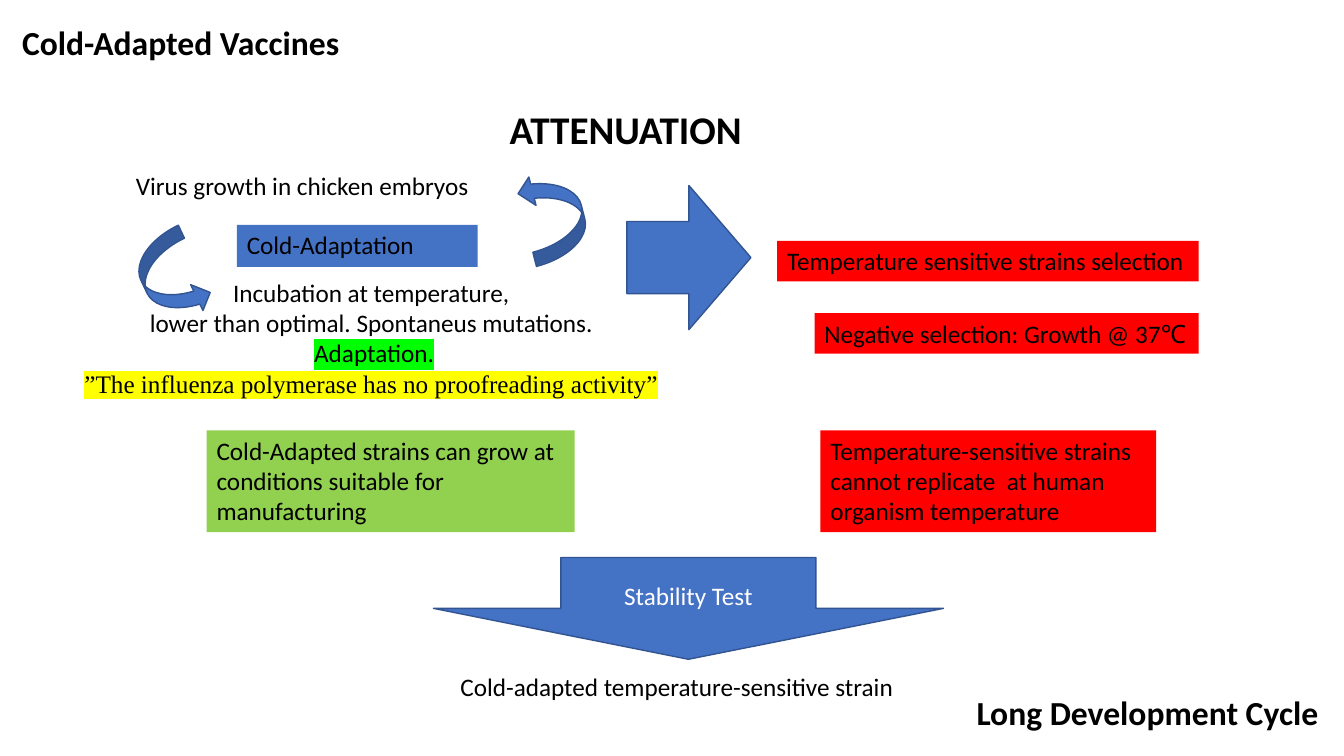
from dataclasses import dataclass

from lxml.etree import SubElement
from pptx import Presentation
from pptx.dml.color import RGBColor
from pptx.enum.shapes import MSO_SHAPE as Preset
from pptx.enum.text import MSO_ANCHOR as Anchor, MSO_AUTO_SIZE as AutoSize, PP_ALIGN as Align
from pptx.oxml.ns import qn
from pptx.util import Pt


@dataclass(frozen=True)
class Theme:
    font: str = "Calibri"
    quote_font: str = "Times New Roman"
    black: str = "000000"
    white: str = "FFFFFF"
    blue: str = "4472C4"
    outline: str = "325491"
    green: str = "92D050"
    red: str = "FF0000"
    lime_marker: str = "00FF00"
    yellow_marker: str = "FFFF00"
    body: int = 18
    title: int = 24
    heading: int = 28


THEME = Theme()


def rgb(color):
    return RGBColor.from_string(color)


def add_run(paragraph, text, size=THEME.body, bold=False, color=THEME.black,
            font=THEME.font, marker=None):
    run = paragraph.add_run()
    run.text = text
    run.font.size = Pt(size)
    run.font.bold = bold
    run.font.color.rgb = rgb(color)
    if marker:
        properties = run.font._element
        highlight = SubElement(properties, qn("a:highlight"))
        SubElement(highlight, qn("a:srgbClr"), val=marker)
    run.font.name = font


def place(shape, box):
    shape.left, shape.top, shape.width, shape.height = (Pt(value) for value in box)


def write(shape, lines, wrap=True, align=Align.LEFT, anchor=Anchor.TOP,
          auto_size=AutoSize.SHAPE_TO_FIT_TEXT, **style):
    """Fill a shape with lines, each a list of (text, run options) pairs."""
    frame = shape.text_frame
    frame.word_wrap = wrap
    frame.auto_size = auto_size
    frame.vertical_anchor = anchor
    for index, line in enumerate(lines):
        paragraph = frame.add_paragraph() if index else frame.paragraphs[0]
        paragraph.alignment = align
        for text, options in line:
            add_run(paragraph, text, **{**style, **options})


def add_text(slide, box, text, **style):
    shape = slide.shapes.add_textbox(*(Pt(value) for value in box))
    write(shape, [[(text, {})]], **style)


def add_block(slide, preset, box, fill, outline=None, rotation=0):
    shape = slide.shapes.add_shape(preset, *(Pt(value) for value in box))
    shape.shadow.inherit = False
    shape.rotation = rotation
    shape.fill.solid()
    shape.fill.fore_color.rgb = rgb(fill)
    if outline:
        shape.line.color.rgb = rgb(outline)
        shape.line.width = Pt(1)
    else:
        shape.line.fill.background()
    return shape


def add_label(slide, box, fill, text, wrap=True):
    write(add_block(slide, Preset.RECTANGLE, box, fill), [[(text, {})]], wrap=wrap)


def add_arrow(slide, preset, box, rotation=0):
    return add_block(slide, preset, box, THEME.blue, THEME.outline, rotation)


def add_title(slide, box, text):
    title = slide.shapes.title
    place(title, box)
    write(title, [[(text, {})]], wrap=False, size=THEME.title, bold=True)


def add_incubation_notes(slide, box):
    shape = slide.shapes.add_textbox(*(Pt(value) for value in box))
    quote = {"font": THEME.quote_font, "marker": THEME.yellow_marker}
    write(shape, [
        [("Incubation at temperature,", {})],
        [("lower than optimal. Spontaneus mutations.", {})],
        [(" ", {}), ("Adaptation.", {"marker": THEME.lime_marker})],
        [("”The influenza polymerase has no proofreading activity”", quote)],
    ], wrap=False, align=Align.CENTER)


def main():
    presentation = Presentation()
    presentation.slide_width, presentation.slide_height = Pt(960), Pt(540)
    slide = presentation.slides.add_slide(presentation.slide_layouts[5])

    add_title(slide, (8.6, 12.2, 244, 36), "Cold-Adapted Vaccines")
    add_text(slide, (357, 72, 182, 41), "ATTENUATION",
             wrap=False, size=THEME.heading, bold=True)

    add_incubation_notes(slide, (51, 194.4, 428.4, 94.3))
    add_text(slide, (90, 118.1, 264.2, 29), "Virus growth in chicken embryos")
    add_arrow(slide, Preset.CURVED_UP_ARROW, (90.7, 177.8, 63.4, 41), 64.6)
    add_arrow(slide, Preset.CURVED_UP_ARROW, (363.6, 133.2, 64, 41.8), 255.8)
    add_label(slide, (169.2, 160.6, 172, 30), THEME.blue, "Cold-Adaptation")
    add_label(slide, (147.6, 307.4, 262.8, 72.7), THEME.green,
              "Cold-Adapted strains can grow at conditions suitable for manufacturing")

    add_arrow(slide, Preset.RIGHT_ARROW, (447.8, 132.5, 88.6, 103))
    add_label(slide, (555.1, 172, 301, 29), THEME.red,
              "Temperature sensitive strains selection", wrap=False)
    add_label(slide, (581.8, 223.6, 274.3, 29), THEME.red,
              "Negative selection: Growth @ 37℃", wrap=False)
    add_label(slide, (586.1, 307.4, 239.8, 72.7), THEME.red,
              "Temperature-sensitive strains cannot replicate  at human organism temperature")

    stability = add_arrow(slide, Preset.DOWN_ARROW, (309.6, 398.2, 364.3, 72.7))
    write(stability, [[("Stability Test", {})]], align=Align.CENTER,
          anchor=Anchor.MIDDLE, auto_size=AutoSize.NONE, color=THEME.white)
    add_text(slide, (321.8, 476, 326.9, 29),
             "Cold-adapted temperature-sensitive strain", wrap=False)
    add_text(slide, (690.5, 491, 299.5, 36), "Long Development Cycle",
             size=THEME.title, bold=True)

    presentation.save("out.pptx")


if __name__ == "__main__":
    main()
